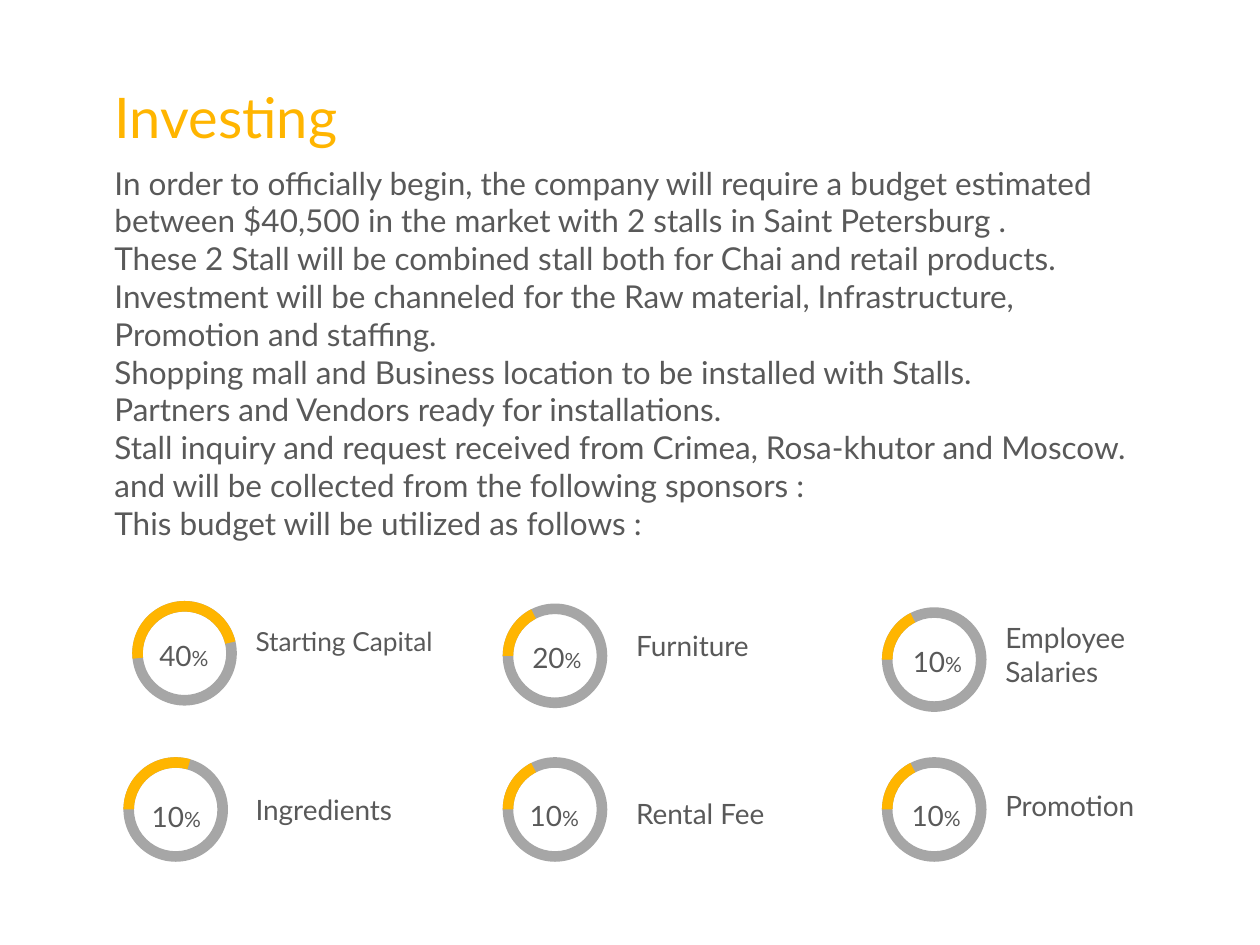
from pptx import Presentation
from pptx.dml.color import RGBColor
from pptx.enum.shapes import MSO_SHAPE as Preset
from pptx.enum.text import MSO_AUTO_SIZE as AutoSize, PP_ALIGN as Align
from pptx.util import Inches, Pt

COLUMNS, ROWS = 100, 75
AMBER, RING_GRAY, TEXT_GRAY = "FFB500", "A6A6A6", "595959"
RING_SIZE, RING_WIDTH = 8.3, 0.101
FULL_TURN = 216  # a block arc's adjustment value for 360 degrees

BUDGET_LINES = [
    "In order to officially begin, the company will require a budget estimated "
    "between $40,500 in the market with 2 stalls in Saint Petersburg .",
    "These 2 Stall will be combined stall both for Chai and retail products.",
    "Investment will be channeled for the Raw material, Infrastructure,",
    "Promotion and staffing.",
    "Shopping mall and Business location to be installed with Stalls.",
    "Partners and Vendors ready for installations.",
    "Stall inquiry and request received from Crimea, Rosa-khutor and Moscow.",
    "and will be collected from the following sponsors : \n"
    "This budget will be utilized as follows :",
]

# label, percent, label size, ring, number and label positions, arc degrees
GAUGES = [
    ("Starting Capital", "40", 15, (10.5, 47.7), (11.1, 49.5), (19.3, 49.1), (174, 346.9)),
    ("Furniture", "20", 16, (39.9, 47.9), (40.7, 49.7), (49.5, 49.4), (180, 242.9)),
    ("Employee Salaries", "10", 16, (70, 48.2), (70.9, 50), (78.8, 48.8), (180, 242.9)),
    ("Ingredients", "10", 16, (9.8, 60.1), (10.5, 62.3), (19.3, 62.4), (180, 286.3)),
    ("Rental Fee", "10", 16, (39.9, 60.1), (40.5, 62.2), (49.5, 62.7), (180, 242.9)),
    ("Promotion", "10", 16, (70, 60.1), (70.8, 62.2), (78.8, 62.1), (180, 242.9)),
]


def color(hex_code):
    return RGBColor.from_string(hex_code)


class Deck:
    """Holds the style and current slide; lengths are grid columns and rows."""

    font = "Lato"

    def __init__(self):
        self.presentation = Presentation()
        self.presentation.slide_width = Inches(10)
        self.presentation.slide_height = Inches(7.5)
        self.slide = self.presentation.slides.add_slide(self.presentation.slide_layouts[6])

    def box(self, position, size):
        column_width = self.presentation.slide_width / COLUMNS
        row_height = self.presentation.slide_height / ROWS
        return [round(length * unit) for length, unit
                in zip((*position, *size), (column_width, row_height) * 2)]

    def text(self, position, size, paragraphs, ink=TEXT_GRAY, align=None, spacing=None):
        """Each paragraph is a list of (words, point size) runs."""
        frame = self.slide.shapes.add_textbox(*self.box(position, size)).text_frame
        frame.word_wrap = True
        frame.auto_size = AutoSize.SHAPE_TO_FIT_TEXT
        for index, runs in enumerate(paragraphs):
            paragraph = frame.add_paragraph() if index else frame.paragraphs[0]
            paragraph.alignment = align
            paragraph.line_spacing = spacing
            for words, points in runs:
                for line_number, line in enumerate(words.split("\n")):
                    if line_number:
                        paragraph.add_line_break()
                    run = paragraph.add_run()
                    run.text = line
                    run.font.name = self.font
                    run.font.size = Pt(points)
                    run.font.color.rgb = color(ink)

    def ring(self, preset, position, fill, adjustments):
        ring = self.slide.shapes.add_shape(preset, *self.box(position, (RING_SIZE, RING_SIZE)))
        ring.shadow.inherit = False
        ring.fill.solid()
        ring.fill.fore_color.rgb = color(fill)
        ring.line.fill.background()
        for index, value in enumerate(adjustments):
            ring.adjustments[index] = value

    def gauge(self, label, percent, label_size, ring_at, number_at, label_at, degrees):
        start, end = (angle * FULL_TURN / 360 for angle in degrees)
        self.ring(Preset.DONUT, ring_at, RING_GRAY, [RING_WIDTH])
        self.ring(Preset.BLOCK_ARC, ring_at, AMBER, [start, end, RING_WIDTH])
        self.text(number_at, (7, 4.4), [[(percent, 16), ("%", 12)]],
                  align=Align.CENTER, spacing=Pt(24))
        label_height = 6.4 if " Salaries" in label else 3.7
        self.text(label_at, (17.9, label_height), [[(label, label_size)]])

    def save(self):
        self.presentation.save("out.pptx")


def main():
    deck = Deck()
    deck.text((8.1, 12.5), (82.9, 31.3), [[(line, 18)] for line in BUDGET_LINES])
    deck.text((8.1, 6.1), (21.2, 6.4), [[("Investing", 32)]], ink=AMBER)
    for gauge in GAUGES:
        deck.gauge(*gauge)
    deck.save()


if __name__ == "__main__":
    main()
